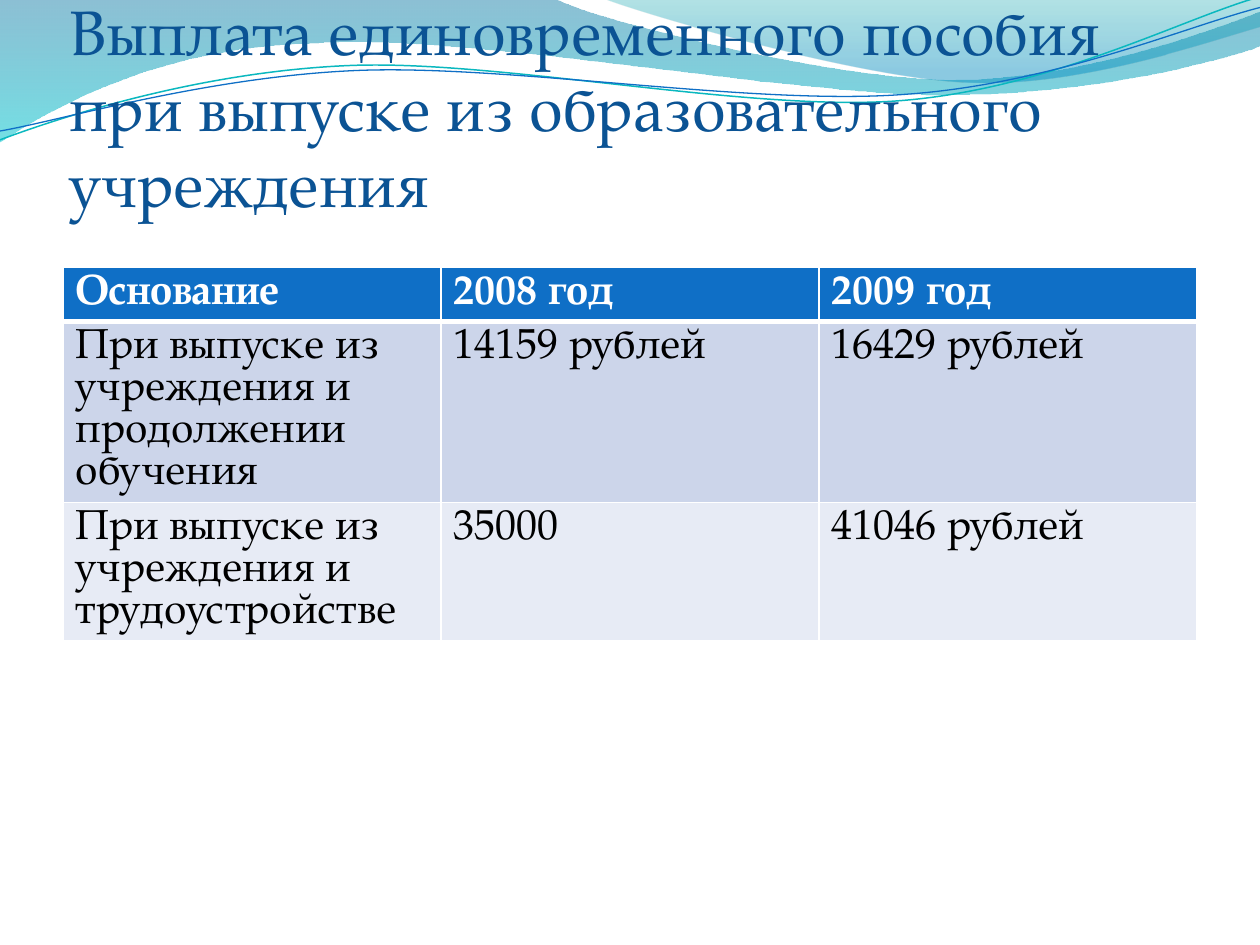
import math

from pptx import Presentation
from pptx import util as u
from pptx.dml.color import RGBColor
from pptx.enum import text
from pptx.oxml.ns import qn
from lxml import etree

FONT = "TeX Gyre Pagella"


def rgb(value):
    return RGBColor.from_string(value)


def draw(shapes, start, segments, close, center=(0, 0), tilt=0):
    cos, sin = math.cos(math.radians(tilt)), math.sin(math.radians(tilt))
    pts = [start] + [seg[i:i + 2] for seg in segments for i in range(0, len(seg), 2)]
    pts = [(x - center[0], y - center[1]) for x, y in pts]
    pts = [(u.Inches(center[0] + x * cos + y * sin), u.Inches(center[1] - x * sin + y * cos))
           for x, y in pts]
    fb = shapes.build_freeform(*pts[0], scale=1.0)
    fb.add_line_segments(pts[1:], close=close)
    sp = fb.convert_to_shape()
    sp.shadow.inherit = False
    sp.rotation = tilt % 360
    lines = iter(list(sp._element.spPr.iter(qn("a:lnTo"))))
    for seg in segments:
        first = next(lines)
        if len(seg) == 6:
            first.tag = qn("a:cubicBezTo")
            for ln in (next(lines), next(lines)):
                first.append(ln[0])
                ln.getparent().remove(ln)
    return sp


prs = Presentation()
prs.slide_width, prs.slide_height = u.Inches(10), u.Inches(7.5)
s = prs.slides.add_slide(prs.slide_layouts[5])

waves = [
    ((0, 0), [(4.4, -0.01), (4.76, 0.17, 6.64, 0.63, 7.58, 0.63),
              (8.53, 0.63, 9.58, 0.26, 10, 0.09), (10.01, 0.36),
              (9.83, 0.44, 8.7, 0.76, 7.46, 0.75), (6.22, 0.75, 3.82, 0.28, 2.57, 0.34),
              (1.29, 0.36, 0.46, 0.83, -0.01, 1.13), (0, 0)],
     [(0, "0074A1", 45), (1, "00C6CF", 55)]),
    ((4.79, -0.01), [(5.09, 0.11, 6.82, 0.62, 7.69, 0.65),
                     (8.56, 0.69, 9.61, 0.32, 10, 0.21), (10, 0), (4.79, -0.01)],
     [(0, "00A1A9", 30), (0.8, "008BBF", 45)]),
]
for start, segments, stops in waves:
    sp = draw(s.shapes, start, segments, True)
    sp.line.fill.background()
    sp.fill.gradient()
    sp.fill.gradient_angle = 270
    for stop, (pos, color, alpha) in zip(sp.fill.gradient_stops, stops):
        stop.position = pos
        stop.color.rgb = rgb(color)
    for clr, (pos, color, alpha) in zip(sp._element.spPr.iter(qn("a:srgbClr")), stops):
        etree.SubElement(clr, qn("a:alpha"), val=str(alpha * 1000))

curves = [
    ((0, 1.11), [(0.48, 0.93, 1.58, 0.57, 2.77, 0.52), (3.95, 0.47, 5.93, 0.89, 7.13, 0.8),
                 (8.33, 0.71, 9.38, 0.15, 9.98, -0.02)], (4.99, 0.58), "0AB8BF", 0.85),
    ((0, 1.04), [(0.47, 0.96, 1.64, 0.61, 2.83, 0.56), (4.03, 0.51, 5.97, 0.84, 7.17, 0.75),
                 (8.36, 0.67, 9.41, 0.21, 10, 0.06)], (5, 0.59), "0F6FC6", 0.75),
]
for start, segments, center, color, width in curves:
    sp = draw(s.shapes, start, segments, False, center, -2.7)
    sp.fill.background()
    sp.line.color.rgb = rgb(color)
    sp.line.width = u.Pt(width)

title = s.shapes.title
s.shapes._spTree.append(title._element)
box = {"left": 0.55, "top": 0.47, "width": 8.95, "height": 1.88}
for name, value in box.items():
    setattr(title, name, u.Inches(value))
tf = title.text_frame
frame = {"word_wrap": True, "auto_size": text.MSO_AUTO_SIZE.NONE,
         "vertical_anchor": text.MSO_ANCHOR.BOTTOM, "margin_left": 0, "margin_right": 0,
         "margin_top": u.Inches(0.05), "margin_bottom": u.Inches(0.6)}
for name, value in frame.items():
    setattr(tf, name, value)
p = tf.paragraphs[0]
p.alignment = text.PP_ALIGN.LEFT
p.line_spacing = u.Pt(43.4)
r = p.add_run()
r.text = "Выплата единовременного пособия при выпуске из образовательного учреждения"
for name, value in {"name": FONT, "size": u.Pt(36), "bold": False}.items():
    setattr(r.font, name, value)
r.font.color.rgb = rgb("0B5394")

rows = [
    ("Основание", "2008 год", "2009 год"),
    ("При выпуске из учреждения и продолжении обучения", "14159 рублей", "16429 рублей"),
    ("При выпуске из учреждения и трудоустройстве", "35000", "41046 рублей"),
]
fills = ["0F6FC6", "CCD5EA", "E7EBF5"]
tbl = s.shapes.add_table(3, 3, u.Inches(0.5), u.Inches(2.12), u.Inches(9), u.Inches(3.5)).table
for i, row in enumerate(rows):
    tbl.rows[i].height = u.Inches(0.41)
    for j, value in enumerate(row):
        cell = tbl.cell(i, j)
        tcPr = cell._tc.get_or_add_tcPr()
        for side in "LRTB":
            thick = (i, side) in ((0, "B"), (1, "T"))
            ln = etree.SubElement(tcPr, qn("a:ln" + side), w=str(u.Pt(3 if thick else 1)))
            etree.SubElement(etree.SubElement(ln, qn("a:solidFill")), qn("a:srgbClr"), val="FFFFFF")
        cell.fill.solid()
        cell.fill.fore_color.rgb = rgb(fills[i])
        p = cell.text_frame.paragraphs[0]
        p.line_spacing = u.Pt(24)
        r = p.add_run()
        r.text = value
        for name, setting in {"name": FONT, "size": u.Pt(24), "bold": i == 0}.items():
            setattr(r.font, name, setting)
        r.font.color.rgb = rgb("000000" if i else "FFFFFF")

prs.save("out.pptx")
